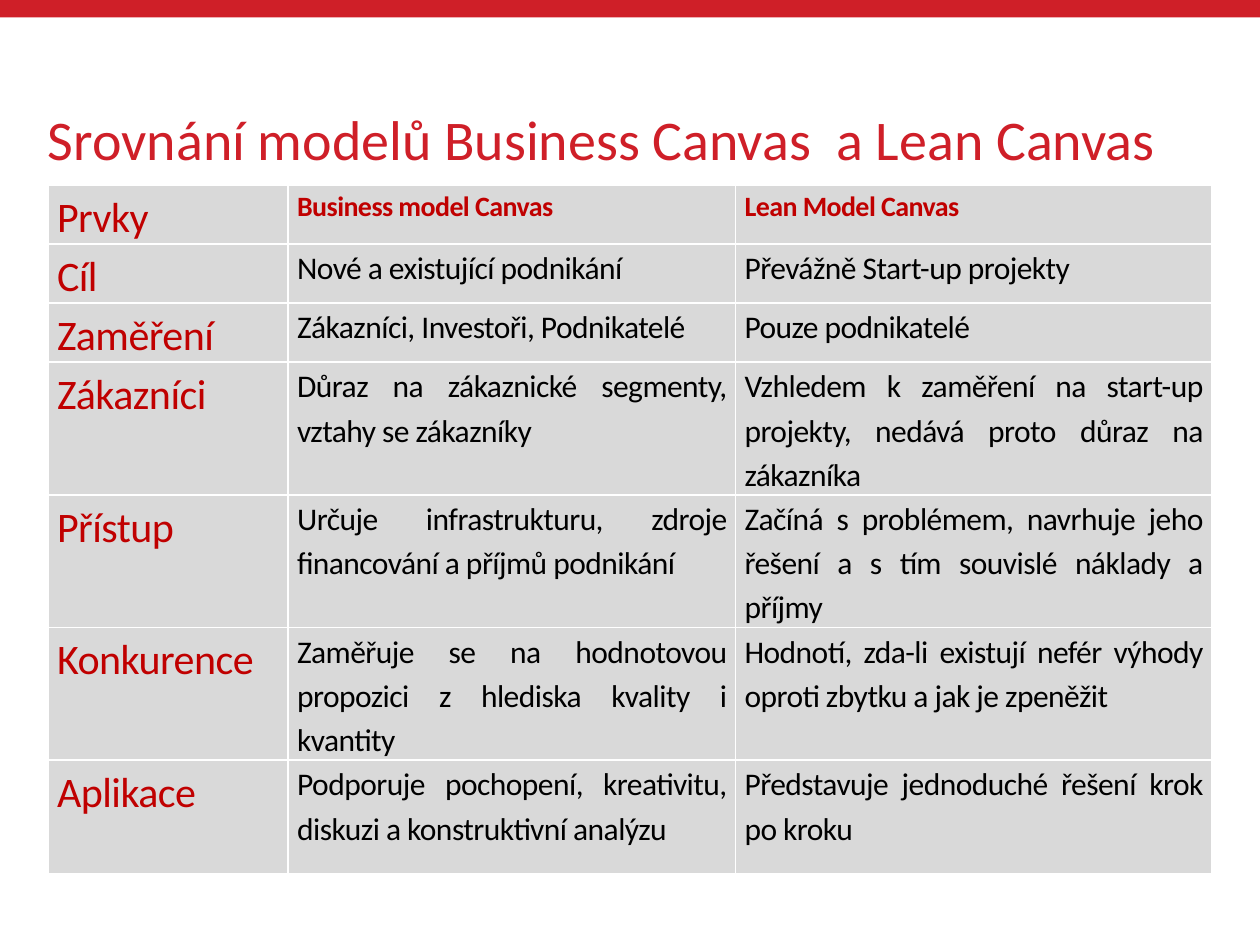
from lxml import etree
from pptx import Presentation
from pptx import util as u
from pptx.dml.color import RGBColor
from pptx.enum import shapes, text
from pptx.oxml import ns

COLORS = {
    "brand": "CF1F28",
    "label": "C00000",
    "body": "000000",
    "cell": "D9D9D9",
    "border": "FFFFFF",
}

ROWS = [
    ("Prvky", "Business model Canvas", "Lean Model Canvas"),
    ("Cíl", "Nové a existující podnikání", "Převážně Start-up projekty"),
    ("Zaměření", "Zákazníci, Investoři, Podnikatelé", "Pouze podnikatelé"),
    ("Zákazníci", "Důraz na zákaznické segmenty, vztahy se zákazníky",
     "Vzhledem k zaměření na start-up projekty, nedává proto důraz na zákazníka"),
    ("Přístup", "Určuje infrastrukturu, zdroje financování a příjmů podnikání",
     "Začíná s problémem, navrhuje jeho řešení a s tím souvislé náklady a příjmy"),
    ("Konkurence", "Zaměřuje se na hodnotovou propozici z hlediska kvality i kvantity",
     "Hodnotí, zda-li existují nefér výhody oproti zbytku a jak je zpeněžit"),
    ("Aplikace", "Podporuje pochopení, kreativitu, diskuzi a konstruktivní analýzu",
     "Představuje jednoduché řešení krok po kroku"),
]
COLUMN_WIDTHS = [4.84, 9.02, 9.6]
ROW_HEIGHTS = [1.19] * 3 + [2.67] * 3 + [2.3]


class SlideBuilder:
    """Holds the style and the current slide and draws each kind of element."""

    def __init__(self, page, font="Calibri"):
        self.page = page
        self.font = font

    def color(self, name):
        return RGBColor.from_string(COLORS[name])

    def format_span(self, span, size, color, bold=False):
        span.font.name = self.font
        span.font.size = u.Pt(size)
        span.font.bold = bold
        span.font.color.rgb = self.color(color)

    def bar(self, left, top, width, height):
        box = self.page.shapes.add_shape(
            shapes.MSO_SHAPE.RECTANGLE, *map(u.Cm, (left, top, width, height)))
        box.shadow.inherit = False
        box.fill.solid()
        box.fill.fore_color.rgb = self.color("brand")
        box.line.fill.background()

    def title(self, wording, left, top, width, height):
        box = self.page.shapes.title
        box.left, box.top, box.width, box.height = map(u.Cm, (left, top, width, height))
        frame = box.text_frame
        frame.text = wording
        frame.word_wrap = True
        frame.auto_size = text.MSO_AUTO_SIZE.NONE
        frame.vertical_anchor = text.MSO_ANCHOR.MIDDLE
        para = frame.paragraphs[0]
        para.alignment = text.PP_ALIGN.LEFT
        para.line_spacing = 0.9
        self.format_span(para.runs[0], 32, "brand")

    def borders(self, cell):
        properties = cell._tc.get_or_add_tcPr()
        for side in ("lnL", "lnR", "lnT", "lnB"):
            line = etree.SubElement(properties, ns.qn(f"a:{side}"), w=str(u.Pt(1)))
            fill = etree.SubElement(line, ns.qn("a:solidFill"))
            etree.SubElement(fill, ns.qn("a:srgbClr"), val=COLORS["border"])

    def cell(self, cell, wording, size, color, bold):
        self.borders(cell)
        cell.fill.solid()
        cell.fill.fore_color.rgb = self.color("cell")
        cell.margin_left = cell.margin_right = u.Cm(0.18)
        cell.margin_top = cell.margin_bottom = 0
        cell.text_frame.text = wording
        para = cell.text_frame.paragraphs[0]
        para.alignment = text.PP_ALIGN.JUSTIFY
        para.line_spacing = 1.15
        span = para.runs[0]
        self.format_span(span, size, color, bold)
        span.font._element.set("spc", "-30")

    def table(self, rows, left, top, widths, heights):
        frame = self.page.shapes.add_table(
            len(rows), len(widths),
            *map(u.Cm, (left, top, sum(widths), sum(heights))))
        table = frame.table
        table.first_row = table.horz_banding = False
        for column, width in zip(table.columns, widths):
            column.width = u.Cm(width)
        for row, height in zip(table.rows, heights):
            row.height = u.Cm(height)
        for r, row in enumerate(rows):
            for c, wording in enumerate(row):
                if c == 0:
                    style = (24, "label", False)
                elif r == 0:
                    style = (16, "label", True)
                else:
                    style = (18, "body", False)
                self.cell(table.cell(r, c), wording, *style)


def main():
    deck = Presentation()
    deck.slide_width, deck.slide_height = u.Cm(25.4), u.Cm(19.05)
    builder = SlideBuilder(deck.slides.add_slide(deck.slide_layouts[5]))
    builder.bar(0, 0, 25.4, 0.35)
    builder.title("Srovnání modelů Business Canvas  a Lean Canvas", 0.71, 1.07, 23.19, 3.58)
    builder.table(ROWS, 0.97, 3.73, COLUMN_WIDTHS, ROW_HEIGHTS)
    deck.save("out.pptx")


if __name__ == "__main__":
    main()
